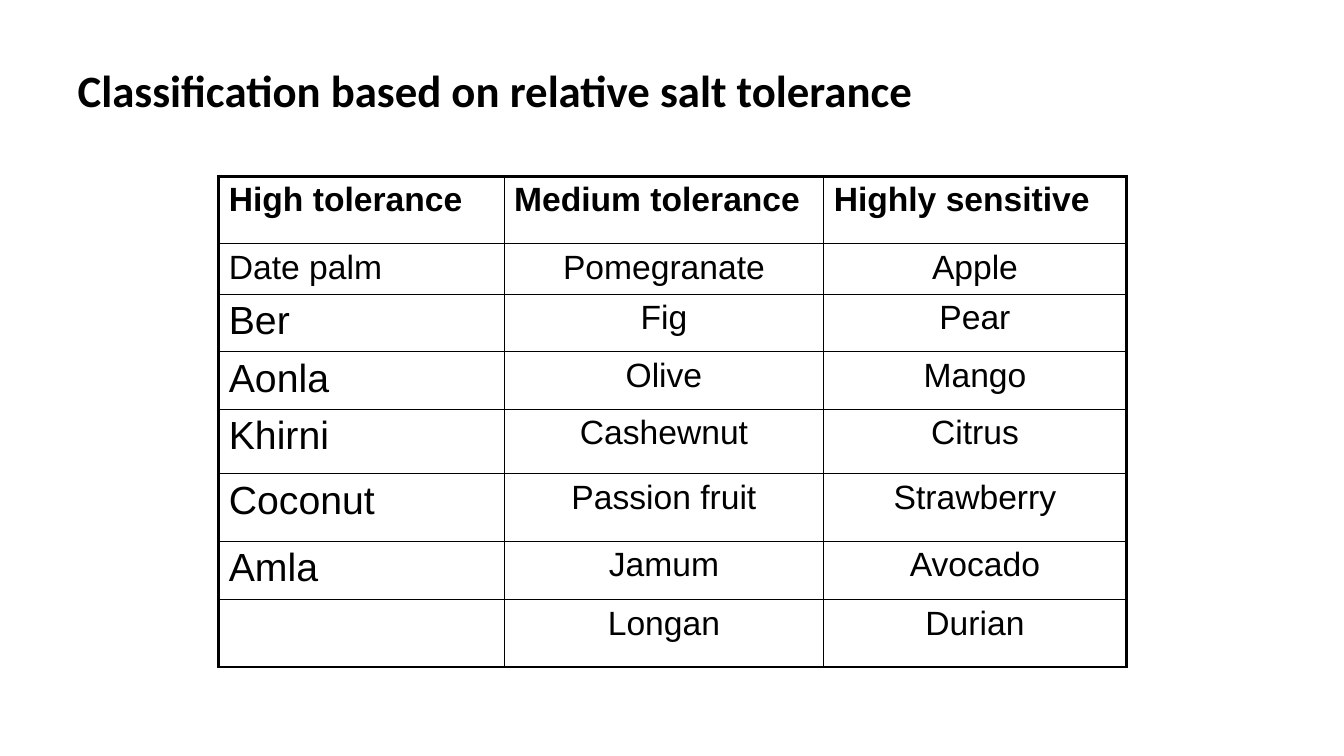
from pptx import Presentation
from pptx.dml.color import RGBColor
from pptx.enum.text import MSO_ANCHOR as Anchor, MSO_AUTO_SIZE as AutoSize, PP_ALIGN as Align
from pptx.util import Pt
from lxml.etree import SubElement
from pptx.oxml.ns import qn

EMU_PER_PX = 9144  # 100 px to the inch
BLACK = RGBColor(0, 0, 0)
OUTER, INNER = Pt(2.25), Pt(1)

COLUMN_WIDTHS = [283, 317, 300]
ROW_HEIGHTS = [67, 50, 57, 57, 64, 67, 58, 67]
TOLERANCE_ROWS = [
    ("High tolerance", "Medium tolerance", "Highly sensitive"),
    ("Date palm", "Pomegranate", "Apple"),
    ("Ber", "Fig", "Pear"),
    ("Aonla", "Olive", "Mango"),
    ("Khirni", "Cashewnut", "Citrus"),
    ("Coconut", "Passion fruit", "Strawberry"),
    ("Amla", "Jamum", "Avocado"),
    ("", "Longan", "Durian"),
]


def px(length):
    return length * EMU_PER_PX


def assign(target, values):
    for name, value in values.items():
        setattr(target, name, value)


class SlideBuilder:
    def __init__(self, slide, colour):
        self.slide = slide
        self.colour = colour

    def label(self, paragraph, text, align, **font):
        paragraph.alignment = align
        run = paragraph.add_run()
        run.text = text
        assign(run.font, font)
        run.font.color.rgb = self.colour

    def title(self, text, left, top, width, height):
        heading = self.slide.shapes.title
        assign(heading, {"left": px(left), "top": px(top),
                         "width": px(width), "height": px(height)})
        frame = heading.text_frame
        assign(frame, {"vertical_anchor": Anchor.MIDDLE, "word_wrap": True,
                       "auto_size": AutoSize.NONE})
        paragraph = frame.paragraphs[0]
        paragraph.line_spacing = 0.9
        self.label(paragraph, text, Align.LEFT, name="Calibri", size=Pt(32), bold=True)

    def borders(self, cell, **widths):
        properties = cell._tc.get_or_add_tcPr()
        for side, width in widths.items():
            line = SubElement(properties, qn(f"a:ln{side}"), w=str(width))
            fill = SubElement(line, qn("a:solidFill"))
            SubElement(fill, qn("a:srgbClr"), val=str(self.colour))

    def table(self, rows, left, top, widths, heights):
        grid = self.slide.shapes.add_table(
            len(rows), len(widths), px(left), px(top),
            px(sum(widths)), px(sum(heights))).table
        assign(grid, {"first_row": False, "horz_banding": False})
        for column, width in zip(grid.columns, widths):
            column.width = px(width)
        for row, height in zip(grid.rows, heights):
            row.height = px(height)

        last_row, last_column = len(rows) - 1, len(widths) - 1
        for r, names in enumerate(rows):
            for c, name in enumerate(names):
                cell = grid.cell(r, c)
                # Thick frame around the table, thin rules within
                self.borders(cell,
                             L=OUTER if c == 0 else INNER,
                             R=OUTER if c == last_column else INNER,
                             T=OUTER if r == 0 else INNER,
                             B=OUTER if r == last_row else INNER)
                cell.fill.background()
                if not name:
                    continue
                # The first column is left-aligned and larger from its second fruit on
                self.label(cell.text_frame.paragraphs[0], name,
                           Align.LEFT if r == 0 or c == 0 else Align.CENTER,
                           name="Arial", size=Pt(28 if c == 0 and r > 1 else 24),
                           bold=r == 0)


def main():
    deck = Presentation()
    assign(deck, {"slide_width": px(1333), "slide_height": px(750)})
    builder = SlideBuilder(deck.slides.add_slide(deck.slide_layouts[5]), BLACK)

    # Heading
    builder.title("Classification based on relative salt tolerance", 67, 30, 1200, 125)

    # Fruit crops by salt tolerance
    builder.table(TOLERANCE_ROWS, 217, 175, COLUMN_WIDTHS, ROW_HEIGHTS)

    deck.save("out.pptx")


if __name__ == "__main__":
    main()
